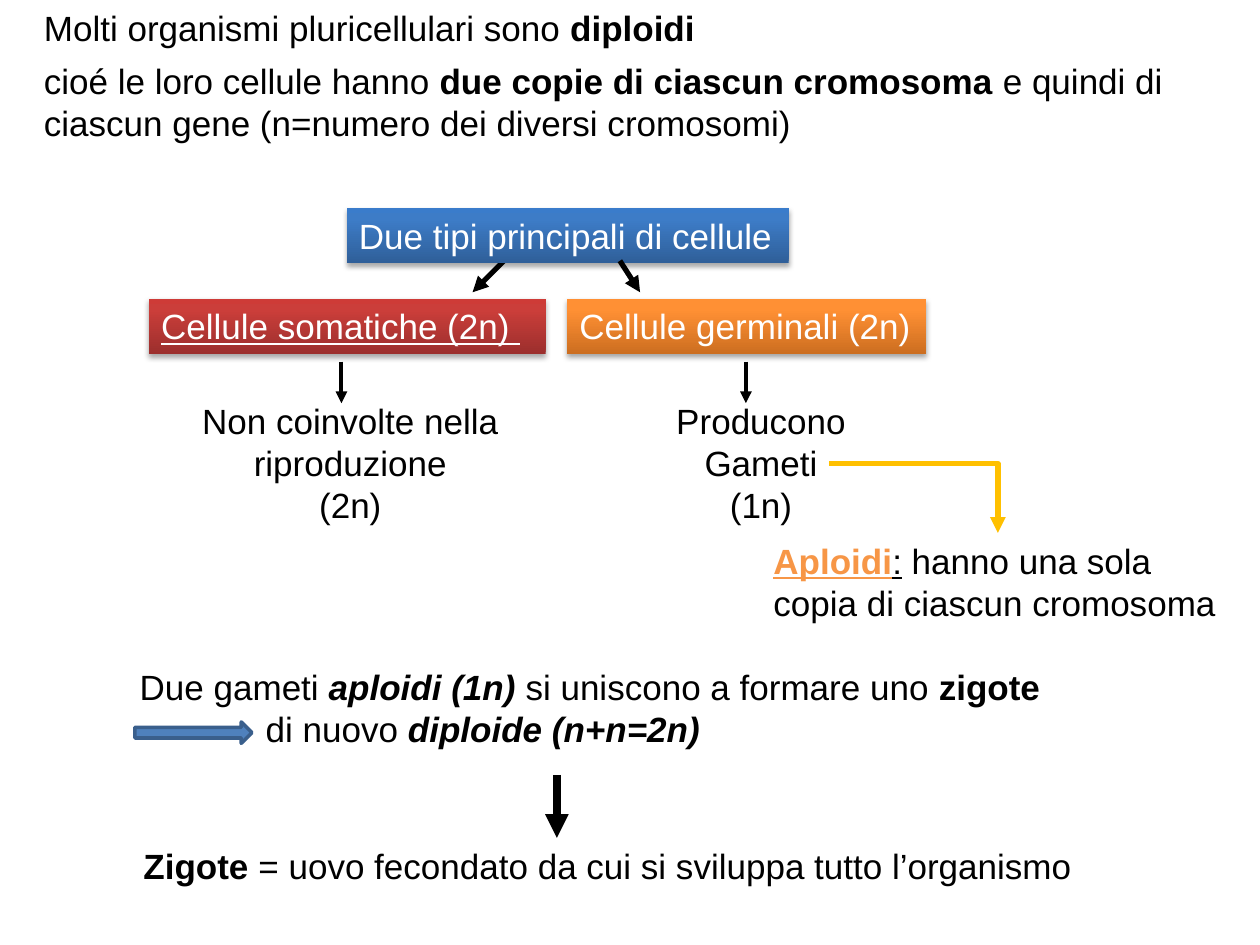
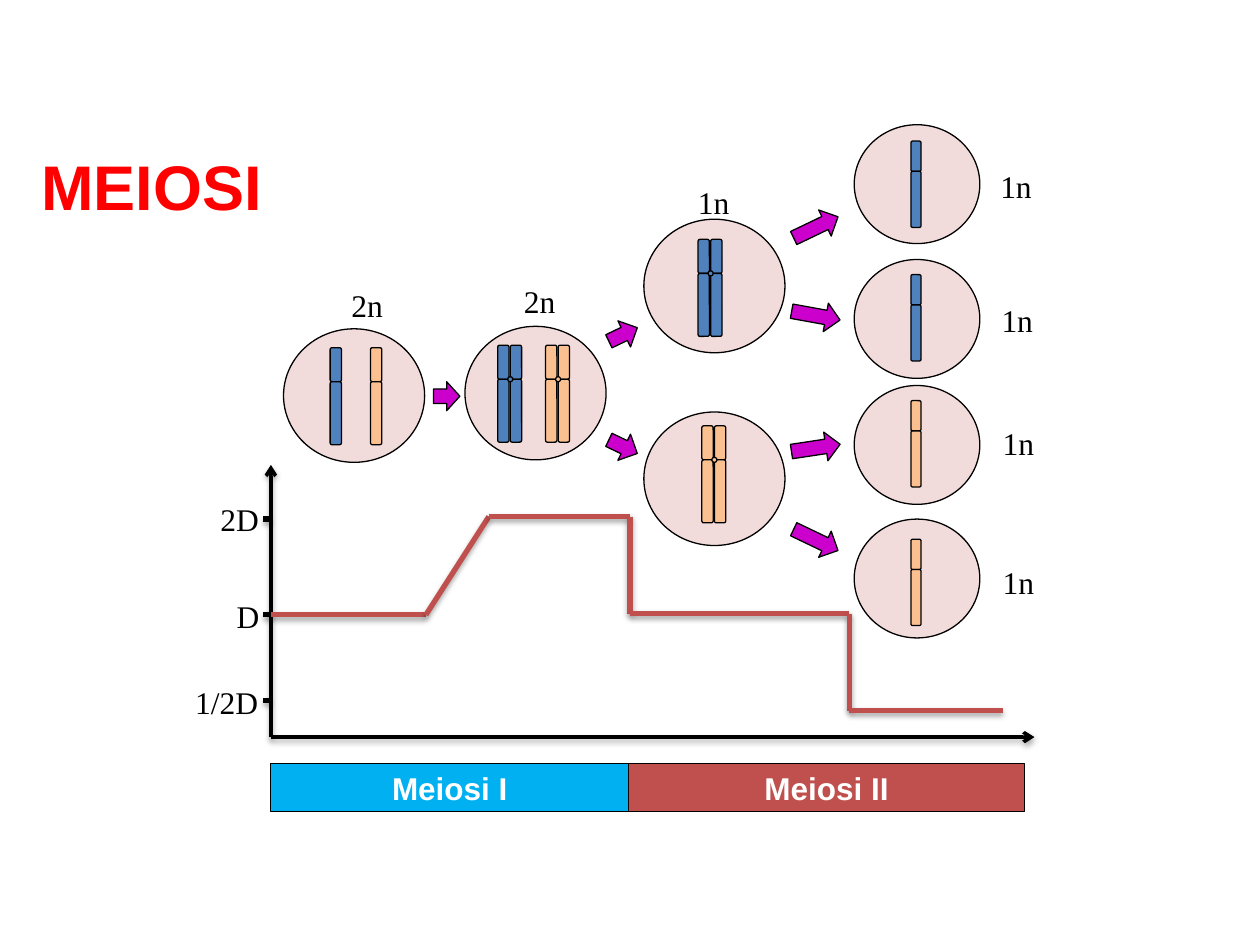
from copy import deepcopy
from dataclasses import dataclass

from lxml import etree
from pptx import Presentation
from pptx.dml.color import RGBColor
from pptx.enum.shapes import MSO_CONNECTOR as LINK, MSO_SHAPE as SHAPE
from pptx.enum.text import MSO_ANCHOR as ANCHOR, PP_ALIGN as ALIGN
from pptx.oxml.ns import qn
from pptx.util import Inches, Pt

BLACK, WHITE, RED, BRICK = "000000", "FFFFFF", "FF0000", "C0504D"
BLUE, PEACH, PINK, PURPLE = "4F81BD", "FAC090", "F2DCDB", "CC00CC"
SANS, SERIF = "Arial", "Times New Roman"


@dataclass(frozen=True)
class Run:
    text: str
    bold: bool = False
    italic: bool = False
    underline: bool = False
    color: str | None = None


@dataclass(frozen=True)
class Banner:
    left: float
    top: float
    width: float
    run: Run
    stops: tuple[str, str, str]


@dataclass(frozen=True)
class Chromosome:
    left: float
    top: float
    color: str
    double: bool = False


@dataclass(frozen=True)
class Cell:
    left: float
    top: float
    chromosomes: tuple[Chromosome, ...]
    scale: float = 1


@dataclass(frozen=True)
class Arrow:
    left: float
    top: float
    width: float
    angle: float = 0


def rgb(color: str) -> RGBColor:
    return RGBColor.from_string(color)


def box(left: float, top: float, width: float, height: float) -> list:
    return [Inches(v) for v in (left, top, width, height)]


def write(tf, *paragraphs, size=20, font=SANS, color=BLACK, align=ALIGN.LEFT,
          wrap=True, anchor=ANCHOR.TOP, tab=None) -> None:
    """Fill a text frame; each paragraph is a string or a list of Run, tab is a stop in inches."""
    tf.word_wrap = wrap
    tf.vertical_anchor = anchor
    for i, runs in enumerate(paragraphs):
        p = tf.add_paragraph() if i else tf.paragraphs[0]
        p.alignment = align
        if tab:
            tabs = etree.SubElement(p._p.get_or_add_pPr(), qn("a:tabLst"))
            etree.SubElement(tabs, qn("a:tab"), pos=str(Inches(tab)), algn="l")
        for run in [Run(runs)] if isinstance(runs, str) else runs:
            r = p.add_run()
            r.text = run.text
            f = r.font
            f.name, f.size = font, Pt(size)
            f.bold, f.italic, f.underline = run.bold, run.italic, run.underline
            f.color.rgb = rgb(run.color or color)


def add_text(s, left, top, width, height, *paragraphs, **fmt) -> None:
    write(s.shapes.add_textbox(*box(left, top, width, height)).text_frame, *paragraphs, **fmt)


def add_shadow(sp_pr) -> None:
    effects = sp_pr.find(qn("a:effectLst"))
    shadow = etree.SubElement(effects, qn("a:outerShdw"), blurRad=str(Pt(3.1)),
                              dist=str(Pt(1.8)), dir="5400000", rotWithShape="0")
    clr = etree.SubElement(shadow, qn("a:srgbClr"), val=BLACK)
    etree.SubElement(clr, qn("a:alpha"), val="35000")


def add_shape(shapes, kind, left, top, width, height, fill, line=BLACK, weight=0.75):
    sp = shapes.add_shape(kind, *box(left, top, width, height))
    sp.shadow.inherit = False
    sp.fill.solid()
    sp.fill.fore_color.rgb = rgb(fill)
    sp.line.color.rgb = rgb(line)
    sp.line.width = Pt(weight)
    return sp


def add_line(s, start, end, color=BLACK, weight=3.0, tail=None, shadow=False,
             kind=LINK.STRAIGHT):
    c = s.shapes.add_connector(kind, *[Inches(v) for v in (*start, *end)])
    c.line.color.rgb = rgb(color)
    c.line.width = Pt(weight)
    sp_pr = c._element.spPr
    if tail:
        etree.SubElement(sp_pr.find(qn("a:ln")), qn("a:tailEnd"), type=tail)
    etree.SubElement(sp_pr, qn("a:effectLst"))
    if shadow:
        add_shadow(sp_pr)
    return c


def add_banner(s, b: Banner) -> None:
    sp = s.shapes.add_shape(SHAPE.RECTANGLE, *box(b.left, b.top, b.width, 0.44))
    sp.line.fill.background()
    sp.fill.gradient()
    sp.fill.gradient_angle = 90
    stop_list = sp._element.spPr.find(".//" + qn("a:gsLst"))
    stop_list.append(deepcopy(stop_list[-1]))
    for stop, color, position in zip(sp.fill.gradient_stops, b.stops, (0, 0.8, 1)):
        stop.color.rgb = rgb(color)
        stop.position = position
    sp.shadow.inherit = False
    add_shadow(sp._element.spPr)
    write(sp.text_frame, [b.run], color=WHITE)


def add_chromosome(shapes, c: Chromosome, scale: float) -> None:
    """Draw one or two chromatids, each a short arm above a long one."""
    width, short, long = 0.09 * scale, 0.27 * scale, 0.5 * scale
    for dx in (0, 0.1) if c.double else (0,):
        for top, height in ((c.top, short), (c.top + short, long)):
            add_shape(shapes, SHAPE.ROUNDED_RECTANGLE, c.left + dx, top, width, height, c.color)
    if c.double:
        add_shape(shapes, SHAPE.OVAL, c.left + 0.08, c.top + 0.25, 0.04, 0.04, c.color)


def add_cell(s, cell: Cell) -> None:
    shapes = s.shapes.add_group_shape().shapes
    add_shape(shapes, SHAPE.OVAL, cell.left, cell.top, 1.12 * cell.scale, 1.06 * cell.scale, PINK)
    for c in cell.chromosomes:
        add_chromosome(shapes, c, cell.scale)


def build_diploid_slide(s) -> None:
    add_text(s, 0.25, 0, 5.41, 0.44,
             [Run("Molti organismi pluricellulari sono "), Run("diploidi", bold=True)], wrap=False)
    add_text(s, 0.25, 0.42, 9.17, 0.77,
             [Run("cioé le loro cellule hanno "),
              Run("due copie di ciascun cromosoma ", bold=True),
              Run("e quindi di ciascun gene (n=numero dei diversi cromosomi)")])

    add_line(s, (4, 2.07), (3.75, 2.32), tail="triangle")
    for banner in (
        Banner(1.18, 2.37, 3.15, Run("Cellule somatiche (2n) ", underline=True),
               ("9C2F2D", "CB3E3A", "CE3B37")),
        Banner(2.75, 1.65, 3.51, Run("Due tipi principali di cellule"),
               ("2F5F99", "3D7CC7", "3A7CCB")),
        Banner(4.5, 2.37, 2.85, Run("Cellule germinali (2n)"),
               ("CC6E20", "FF9034", "FF9136")),
    ):
        add_banner(s, banner)
    add_line(s, (4.92, 2.07), (5.08, 2.32), tail="triangle")

    for arrow_x, left, lines in (
        (2.71, 1.24, ("Non coinvolte nella riproduzione", "(2n)")),
        (5.92, 4.5, ("Producono", "Gameti", "(1n)")),
    ):
        add_line(s, (arrow_x, 2.87), (arrow_x, 3.2), weight=2.25, tail="triangle")
        add_text(s, left, 3.12, 3.08, 1.11, *lines, align=ALIGN.CENTER)

    add_text(s, 6.04, 4.23, 3.75, 0.77,
             [Run("Aploidi", bold=True, underline=True, color="F79646"),
              Run(":", underline=True), Run(" hanno una sola copia di ciascun cromosoma")])
    add_text(s, 1.01, 5.23, 7.41, 0.77,
             [Run("Due gameti "), Run("aploidi (1n) ", bold=True, italic=True),
              Run("si uniscono a formare uno "), Run("zigote", bold=True),
              Run(" \tdi nuovo "), Run("diploide (n+n=2n)", bold=True, italic=True)], tab=1)
    add_line(s, (4.42, 6.15), (4.42, 6.65), weight=4.5, tail="triangle")
    add_text(s, 1.04, 6.65, 7.71, 0.44,
             [Run("Zigote", bold=True),
              Run(" = uovo fecondato da cui si sviluppa tutto l’organismo")])
    add_shape(s.shapes, SHAPE.RIGHT_ARROW, 1.07, 5.73, 0.93, 0.17, BLUE, "3A5F8C", 2)
    elbow = add_line(s, (6.58, 3.68), (7.92, 4.23), "FFC000", tail="triangle", kind=LINK.ELBOW)
    elbow._element.spPr.find(qn("a:prstGeom")).set("prst", "bentConnector2")


def build_dna_graph(s) -> None:
    origin = (2.15, 5.85)
    for end in ((2.15, 3.69), (8.21, 5.85)):
        add_line(s, origin, end, weight=2, tail="arrow", shadow=True)
    for label, tick_y, left, top, width in (
        ("2D", 4.12, 1.65, 3.92, 0.51),
        ("D", 4.88, 1.78, 4.69, 0.38),
        ("1/2D", 5.56, 1.45, 5.37, 0.71),
    ):
        add_line(s, (2.15, tick_y), (2.09, tick_y), shadow=True)
        add_text(s, left, top, width, 0.4, label, size=18, font=SERIF, wrap=False)

    curve = [(2.15, 4.88), (3.38, 4.88), (3.88, 4.1), (5, 4.1),
             (5, 4.87), (6.74, 4.87), (6.74, 5.64), (7.96, 5.64)]
    for start, end in zip(curve, curve[1:]):
        add_line(s, start, end, BRICK, shadow=True)

    for label, left, width, fill in (("Meiosi I", 2.15, 2.84, "00B0F0"),
                                     ("Meiosi II", 4.99, 3.14, BRICK)):
        sp = add_shape(s.shapes, SHAPE.RECTANGLE, left, 6.06, width, 0.38, fill)
        write(sp.text_frame, [Run(label, bold=True)], size=18, color=WHITE,
              align=ALIGN.CENTER, wrap=False, anchor=ANCHOR.MIDDLE)


def build_meiosis_slide(s) -> None:
    build_dna_graph(s)
    cells = [
        Cell(2.25, 2.61, (Chromosome(2.62, 2.76, BLUE), Chromosome(2.94, 2.76, PEACH))),
        Cell(3.69, 2.59, (Chromosome(3.95, 2.74, BLUE, True),
                          Chromosome(4.33, 2.74, PEACH, True))),
        Cell(5.11, 1.74, (Chromosome(5.54, 1.9, BLUE, True),)),
        Cell(5.11, 3.27, (Chromosome(5.57, 3.38, PEACH, True),)),
    ]
    cells += [
        Cell(6.78, top, (Chromosome(7.23, arm_top, color),), scale=0.89)
        for top, arm_top, color in ((0.99, 1.12, BLUE), (2.06, 2.18, BLUE),
                                    (3.06, 3.18, PEACH), (4.12, 4.28, PEACH))
    ]
    for cell in cells:
        add_cell(s, cell)

    for a in (
        Arrow(3.44, 3.03, 0.21),
        Arrow(4.82, 2.54, 0.25, -25.6), Arrow(4.82, 3.43, 0.25, 25.6),
        Arrow(6.28, 1.69, 0.39, -25.6), Arrow(6.28, 2.39, 0.39, 10.3),
        Arrow(6.28, 3.44, 0.39, -8.5), Arrow(6.28, 4.17, 0.39, 25.6),
    ):
        sp = add_shape(s.shapes, SHAPE.RIGHT_ARROW, a.left, a.top, a.width, 0.23, PURPLE)
        sp.rotation = a.angle

    for label, left, top in (("2n", 2.69, 2.22), ("2n", 4.06, 2.19), ("1n", 5.44, 1.4),
                             ("1n", 7.84, 1.28), ("1n", 7.85, 2.34),
                             ("1n", 7.86, 3.32), ("1n", 7.86, 4.42)):
        add_text(s, left, top, 0.45, 0.4, label, size=18, font=SERIF, wrap=False)
    add_text(s, 0.23, 1.12, 1.97, 0.71, [Run("MEIOSI", bold=True)],
             size=36, color=RED, wrap=False)


def main() -> None:
    prs = Presentation()
    prs.slide_width, prs.slide_height = Inches(10), Inches(7.5)
    for build in (build_diploid_slide, build_meiosis_slide):
        build(prs.slides.add_slide(prs.slide_layouts[6]))
    prs.save("out.pptx")


if __name__ == "__main__":
    main()
